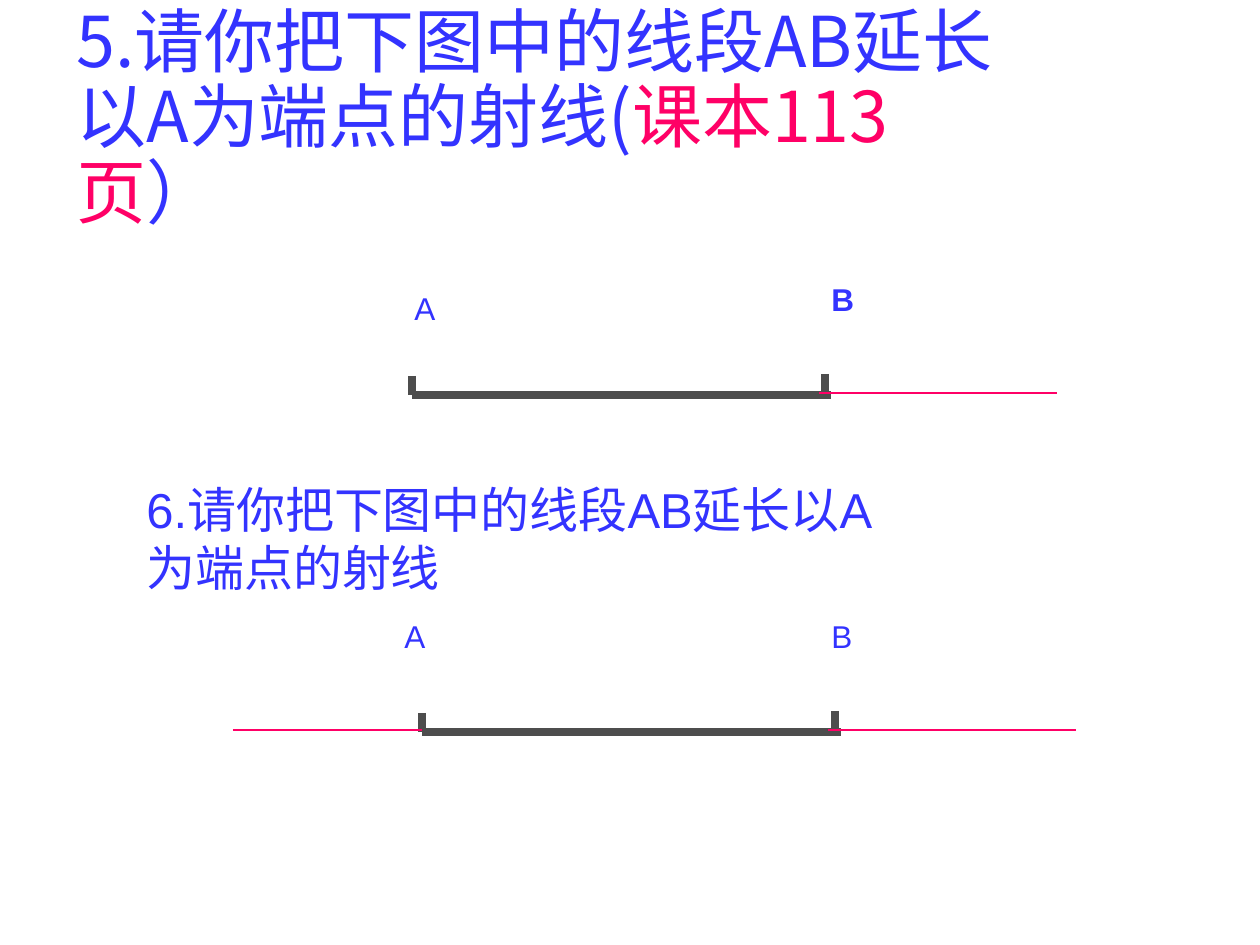
import pptx
import pptx.dml.color
import pptx.enum.shapes
import pptx.enum.text
import pptx.oxml.ns
import pptx.util
from dataclasses import dataclass
from lxml import etree


@dataclass(frozen=True)
class Theme:
    blue: str = "3333FF"
    pink: str = "FF0066"
    gray: str = "4D4D4D"
    title_font: str = "Noto Sans CJK JP"
    text_font: str = "Arial"
    title_size: int = 40
    question_size: int = 28
    label_size: int = 18
    segment_width: float = 4.5
    ray_width: float = 0.75


def px(length):
    return pptx.util.Emu(round(length * 914400 / 126))


def color(value):
    return pptx.dml.color.RGBColor.from_string(value)


class SlideBuilder:
    def __init__(self, presentation, theme):
        self.theme = theme
        self.slide = presentation.slides.add_slide(presentation.slide_layouts[5])

    def add_run(self, paragraph, text, size, font, fill, bold=False):
        run = paragraph.add_run()
        run.text = text
        run.font.size = pptx.util.Pt(size)
        run.font.name = font
        run.font.bold = bold
        run.font.color.rgb = color(fill)
        return run

    def title(self, left, top, width, height, parts):
        shape = self.slide.shapes.title
        shape.left, shape.top = px(left), px(top)
        shape.width, shape.height = px(width), px(height)
        frame = shape.text_frame
        frame.word_wrap = True
        frame.auto_size = pptx.enum.text.MSO_AUTO_SIZE.NONE
        frame.vertical_anchor = pptx.enum.text.MSO_ANCHOR.MIDDLE
        paragraph = frame.paragraphs[0]
        paragraph.alignment = pptx.enum.text.PP_ALIGN.LEFT
        paragraph.line_spacing = 0.9
        for text, fill in parts:
            run = self.add_run(paragraph, text, self.theme.title_size,
                               self.theme.title_font, fill)
            # East Asian typeface
            etree.SubElement(run.font._element, pptx.oxml.ns.qn("a:ea"),
                             typeface=self.theme.title_font)

    def text(self, left, top, width, height, text, size, bold=False):
        shape = self.slide.shapes.add_textbox(px(left), px(top), px(width), px(height))
        shape.text_frame.word_wrap = True
        self.add_run(shape.text_frame.paragraphs[0], text, size,
                     self.theme.text_font, self.theme.blue, bold)

    def label(self, left, top, text, bold=False):
        self.text(left, top, 110, 50, text, self.theme.label_size, bold)

    def line(self, x1, y1, x2, y2, fill, width):
        connector = self.slide.shapes.add_connector(
            pptx.enum.shapes.MSO_CONNECTOR.STRAIGHT, px(x1), px(y1), px(x2), px(y2))
        connector.line.color.rgb = color(fill)
        connector.line.width = pptx.util.Pt(width)
        etree.SubElement(connector._element.spPr, pptx.oxml.ns.qn("a:effectLst"))

    def segment(self, left, baseline):
        """Thick base line with an upright tick at each end point."""
        for x1, y1, x2, y2 in ((0, 0, 419, 0), (0, -19, 0, 0), (413, -21, 413, -1)):
            self.line(left + x1, baseline + y1, left + x2, baseline + y2,
                      self.theme.gray, self.theme.segment_width)

    def ray(self, start, end, height):
        self.line(start, height, end, height, self.theme.pink, self.theme.ray_width)


def main():
    presentation = pptx.Presentation()
    presentation.slide_width = px(1260)
    presentation.slide_height = px(945)
    theme = Theme()
    builder = SlideBuilder(presentation, theme)

    # Question 5
    builder.title(64, 2, 951, 236, [
        ("5.请你把下图中的线段AB延长以A为端点的射线(", theme.blue),
        ("课本113页", theme.pink),
        ("）", theme.blue),
    ])
    builder.segment(412, 395)
    builder.label(402, 283, "A")
    builder.label(819, 274, "B", bold=True)

    # Question 6
    builder.segment(422, 732)
    builder.label(392, 611, "A")
    builder.label(819, 611, "B")
    builder.text(134, 473, 777, 130, "6.请你把下图中的线段AB延长以A为端点的射线",
                 theme.question_size)

    # Extensions of both segments
    for start, end, height in ((819, 1057, 393), (828, 1076, 730), (233, 422, 730)):
        builder.ray(start, end, height)

    presentation.save("out.pptx")


if __name__ == "__main__":
    main()
